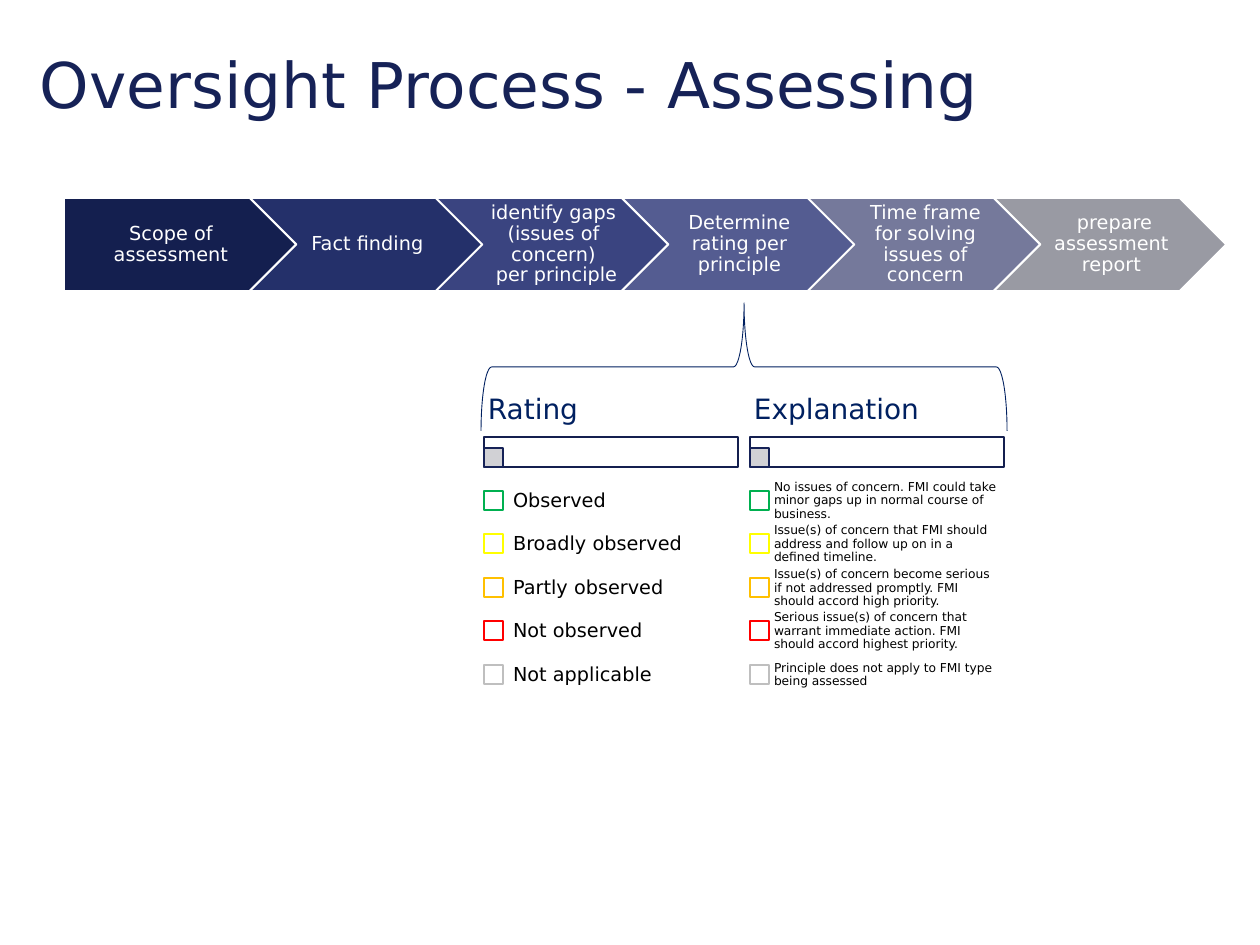
from lxml import etree
from pptx import Presentation
from pptx.dml.color import RGBColor
from pptx.enum.shapes import MSO_SHAPE
from pptx.enum.text import MSO_ANCHOR, PP_ALIGN
from pptx.oxml.ns import qn
from pptx.util import Emu, Pt

PENTAGON, CHEVRON = MSO_SHAPE.PENTAGON, MSO_SHAPE.CHEVRON
RECTANGLE, LEFT_BRACE = MSO_SHAPE.RECTANGLE, MSO_SHAPE.LEFT_BRACE
TOP, MIDDLE = MSO_ANCHOR.TOP, MSO_ANCHOR.MIDDLE
LEFT, CENTER = PP_ALIGN.LEFT, PP_ALIGN.CENTER

EMU_PER_PX = 914400 / 126
FONT = "DejaVu Sans"

WHITE = RGBColor(0xFF, 0xFF, 0xFF)
BLACK = RGBColor(0x00, 0x00, 0x00)
NAVY = RGBColor(0x16, 0x22, 0x57)
DARK_NAVY = RGBColor(0x14, 0x1F, 0x4F)
HEADING_BLUE = RGBColor(0x00, 0x20, 0x60)
PALE_GREY = RGBColor(0xCC, 0xCD, 0xD1)
GREEN = RGBColor(0x00, 0xB0, 0x50)
YELLOW = RGBColor(0xFF, 0xFF, 0x00)
AMBER = RGBColor(0xFF, 0xC0, 0x00)
RED = RGBColor(0xFF, 0x00, 0x00)
GREY = RGBColor(0xBF, 0xBF, 0xBF)

STEPS = [
    ("Scope of assessment", DARK_NAVY),
    ("Fact finding", RGBColor(0x24, 0x30, 0x6A)),
    ("identify gaps (issues of concern)\n per principle", RGBColor(0x3A, 0x44, 0x80)),
    ("Determine rating per principle", RGBColor(0x54, 0x5C, 0x91)),
    ("Time frame for solving issues of concern", RGBColor(0x75, 0x79, 0x9B)),
    (" prepare assessment report", RGBColor(0x99, 0x9A, 0xA3)),
]
RATING_COLOURS = [GREEN, YELLOW, AMBER, RED, GREY]
RATINGS = ["Observed", "Broadly observed", "Partly observed", "Not observed", "Not applicable"]
EXPLANATIONS = [
    "No issues of concern. FMI could take minor gaps up in normal course of business.",
    "Issue(s) of concern that FMI should address and follow up on in a defined timeline.",
    "Issue(s) of concern become serious if not addressed promptly. FMI should accord high priority.",
    "Serious issue(s) of concern that warrant immediate action. FMI should accord highest priority.",
    "Principle does not apply to FMI type being assessed",
]


def px(*lengths):
    return [Emu(round(length * EMU_PER_PX)) for length in lengths]


class SlideBuilder:
    """Holds the text style and the slide being filled."""

    def __init__(self, slide, font=FONT):
        self.slide = slide
        self.font = font

    def shape(self, kind, place, fill, line, width=1, opacity=100, rotation=0):
        shape = self.slide.shapes.add_shape(kind, *px(*place))
        shape.shadow.inherit = False
        shape.rotation = rotation
        shape.line.color.rgb = line
        shape.line.width = Pt(width)
        if fill is None:
            shape.fill.background()
            return
        shape.fill.solid()
        shape.fill.fore_color.rgb = fill
        if opacity < 100:
            colour = shape.fill._xPr.find(".//" + qn("a:srgbClr"))
            etree.SubElement(colour, qn("a:alpha"), val=str(opacity * 1000))

    def text(self, words, place, size, colour, insets=(0, 0, 0, 0),
             align=LEFT, anchor=MIDDLE, spacing=0.9):
        """Insets run left, top, right, bottom; a newline is a line break."""
        frame = self.slide.shapes.add_textbox(*px(*place)).text_frame
        frame.word_wrap = True
        frame.vertical_anchor = anchor
        (frame.margin_left, frame.margin_top,
         frame.margin_right, frame.margin_bottom) = px(*insets)
        para = frame.paragraphs[0]
        para.alignment = align
        para.line_spacing = spacing
        for number, line in enumerate(words.split("\n")):
            if number:
                para.add_line_break()
            span = para.add_run()
            span.text = line
            span.font.name = self.font
            span.font.size = Pt(size)
            span.font.color.rgb = colour

    def process(self, steps, left=64, top=198, pitch=186, width=232, height=93):
        point = height // 2
        for index, (label, fill) in enumerate(steps):
            x = left + index * pitch
            self.shape(CHEVRON if index else PENTAGON, (x, top, width, height), fill, WHITE)
            if index:
                place, inset = (x + point, top, width - 2 * point, height), 6
            else:
                place, inset = (x, top, width - point // 2, height), 8
            self.text(label, place, 11, WHITE, (inset, 4, 3, 4), CENTER)

    def rating_column(self, left, heading, entries, size, inset):
        square = 19
        self.shape(RECTANGLE, (left, 437, 254, 30), WHITE, DARK_NAVY)
        self.shape(RECTANGLE, (left, 448, square, square), PALE_GREY, NAVY, opacity=90)
        self.text(heading, (left, 383, 254, 54), 16, HEADING_BLUE, (4, 3, 4, 3))
        for row, (entry, colour) in enumerate(zip(entries, RATING_COLOURS)):
            y = 479 + row * 87 // 2
            self.shape(RECTANGLE, (left, y + 12, square, square), WHITE, colour)
            self.text(entry, (left + 18, y, 236, 44), size, BLACK, (inset,) * 4)


def main():
    deck = Presentation()
    deck.slide_width, deck.slide_height = px(1260, 945)
    builder = SlideBuilder(deck.slides.add_slide(deck.slide_layouts[6]))

    builder.text("Oversight Process - Assessing", (40, 55, 1181, 93), 36, NAVY,
                 anchor=TOP, spacing=Pt(37.5))
    builder.process(STEPS)
    builder.rating_column(484, "Rating", RATINGS, 11, 11)
    builder.rating_column(750, "Explanation", EXPLANATIONS, 7, 6)
    builder.shape(LEFT_BRACE, (680, 104, 128, 526), None, HEADING_BLUE, width=0.5, rotation=90)

    deck.save("out.pptx")


if __name__ == "__main__":
    main()
